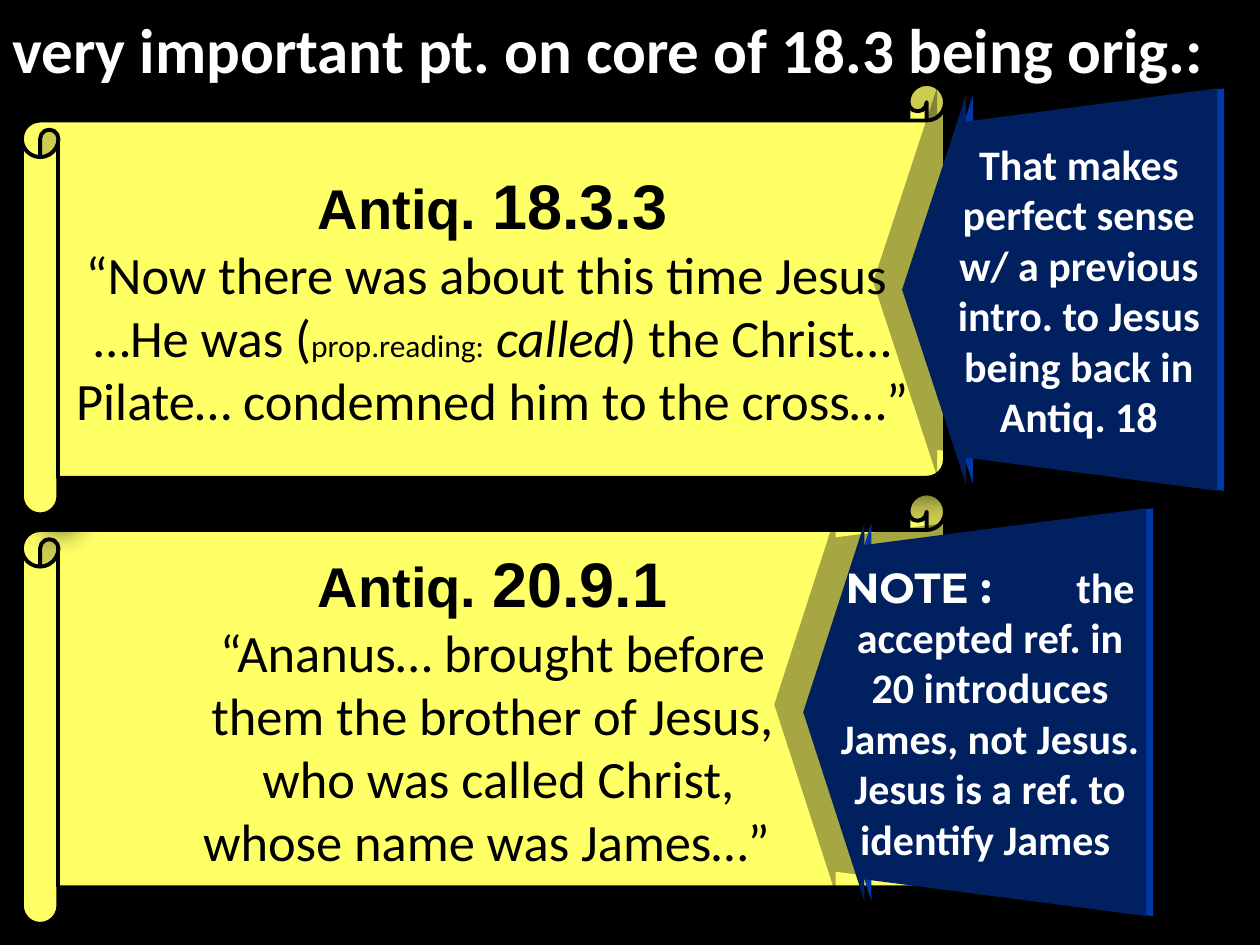
from collections import namedtuple
from dataclasses import dataclass

from lxml.etree import SubElement
from pptx import Presentation
from pptx.dml.color import RGBColor
from pptx.enum.shapes import MSO_SHAPE
from pptx.enum.text import MSO_ANCHOR, PP_ALIGN
from pptx.oxml.ns import qn
from pptx.util import Pt


@dataclass(frozen=True)
class Theme:
    black: str = "000000"
    white: str = "FFFFFF"
    parchment: str = "FFFF66"
    navy: str = "002060"
    edge: str = "0038A8"
    heading_font: str = "Arial"
    body_font: str = "Calibri"
    note_font: str = "Montserrat"
    title: int = 36
    heading: int = 32
    number: int = 36
    quote: int = 30
    aside: int = 18
    note: int = 24


THEME = Theme()
Span = namedtuple("Span", "text size font bold italic spacing", defaults=(False, False, 0))
Arrow = namedtuple("Arrow", "tip axis head tail head_half neck_half tail_half")


def quote(text, size=THEME.quote, italic=False):
    return Span(text, size, THEME.body_font, italic=italic)


def note(text, font=THEME.body_font, spacing=0):
    return Span(text, THEME.note, font, True, spacing=spacing)


def heading(number):
    return [Span("Antiq. ", THEME.heading, THEME.heading_font, True),
            Span(number, THEME.number, THEME.heading_font, True)]


def paint(shape, color):
    shape.fill.solid()
    shape.fill.fore_color.rgb = RGBColor.from_string(color)
    shape.line.fill.background()
    shape.shadow.inherit = False


def add_shadow(shape, alpha, blur, distance, angle):
    effects = shape._element.spPr.find(qn("a:effectLst"))
    shadow = SubElement(effects, qn("a:outerShdw"), blurRad=str(Pt(blur)),
                        dist=str(Pt(distance)), dir=str(angle * 60000),
                        algn="ctr", rotWithShape="0")
    color = SubElement(shadow, qn("a:srgbClr"), val=THEME.black)
    SubElement(color, qn("a:alpha"), val=str(alpha * 1000))


def write(shape, paragraphs, color, align=PP_ALIGN.CENTER,
          anchor=MSO_ANCHOR.MIDDLE, insets=(7.2, 3.6, 7.2, 3.6)):
    frame = shape.text_frame
    frame.word_wrap = True
    frame.vertical_anchor = anchor
    (frame.margin_left, frame.margin_top,
     frame.margin_right, frame.margin_bottom) = map(Pt, insets)
    for index, spans in enumerate(paragraphs):
        para = frame.paragraphs[0] if index == 0 else frame.add_paragraph()
        para.alignment = align
        for span in spans:
            run = para.add_run()
            run.text = span.text
            font = run.font
            font.size = Pt(span.size)
            font.name = span.font
            font.bold = span.bold
            font.italic = span.italic
            font.color.rgb = RGBColor.from_string(color)
            if span.spacing:
                run._r.get_or_add_rPr().set("spc", str(span.spacing * 100))


def add_title(page, deck, text):
    box = page.shapes.add_shape(MSO_SHAPE.RECTANGLE, 0, 0, deck.slide_width, deck.slide_height)
    paint(box, THEME.black)
    write(box, [[Span(text, THEME.title, THEME.body_font, True)]], THEME.white,
          PP_ALIGN.LEFT, MSO_ANCHOR.TOP, (7.2, 6, 7.2, 3.6))


def add_scroll(page, top, paragraphs):
    scroll = page.shapes.add_shape(MSO_SHAPE.HORIZONTAL_SCROLL,
                                   Pt(12.5), Pt(top), Pt(527.5), Pt(246))
    scroll.adjustments[0] = 0.085
    paint(scroll, THEME.parchment)
    scroll.line.color.rgb = RGBColor.from_string(THEME.black)
    scroll.line.width = Pt(2.25)
    add_shadow(scroll, 65, 15, 15, 40)
    write(scroll, paragraphs, THEME.black)


def add_outline(page, arrow, color, shift=0):
    upper = [(arrow.head, arrow.head_half), (arrow.head, arrow.neck_half),
             (arrow.tail, arrow.tail_half)]
    points = [(x, arrow.axis - half) for x, half in upper]
    points += [(x, arrow.axis + half) for x, half in reversed(upper)]
    builder = page.shapes.build_freeform(Pt(arrow.tip + shift), Pt(arrow.axis))
    builder.add_line_segments([(Pt(x + shift), Pt(y)) for x, y in points])
    shape = builder.convert_to_shape()
    paint(shape, color)
    return shape


def add_arrow(page, arrow, spans, left_inset, right_inset):
    depth = add_outline(page, arrow, THEME.edge, 4)
    add_shadow(depth, 35, 0, 21, 192)
    face = add_outline(page, arrow, THEME.navy)
    write(face, [spans], THEME.white, insets=(left_inset, 3.6, right_inset, 3.6))


def main():
    deck = Presentation()
    deck.slide_width, deck.slide_height = Pt(720), Pt(540)
    page = deck.slides.add_slide(deck.slide_layouts[6])
    add_title(page, deck, "very important pt. on core of 18.3 being orig.:")
    add_scroll(page, 282, [
        heading("20.9.1"),
        [quote("“Ananus… brought before")],
        [quote("them the brother of Jesus,")],
        [quote(" who was called Christ,")],
        [quote("whose name was James…” ")],
    ])
    add_scroll(page, 48, [
        heading("18.3.3"),
        [quote("“Now there was about this time Jesus ")],
        [quote("…He was ("), quote("prop.reading:", THEME.aside), quote(" "),
         quote("called", italic=True),
         quote(") the Christ… Pilate… condemned him to the cross…”")],
    ])
    add_arrow(page, Arrow(459, 407, 494, 655, 108, 95.5, 116.5), [
        note("NOTE :", THEME.note_font),
        note(" ", spacing=43),
        note("the accepted ref. in 20 introduces James, not Jesus. "
             "Jesus is a ref. to identify James "),
    ], 17.5, 0)
    add_arrow(page, Arrow(515.5, 165.5, 552, 695.5, 111, 96, 115), [
        note("That makes perfect sense w/ a previous intro. to Jesus "
             "being back in Antiq. 18"),
    ], 28.5, 6.5)
    deck.save("out.pptx")


if __name__ == "__main__":
    main()
